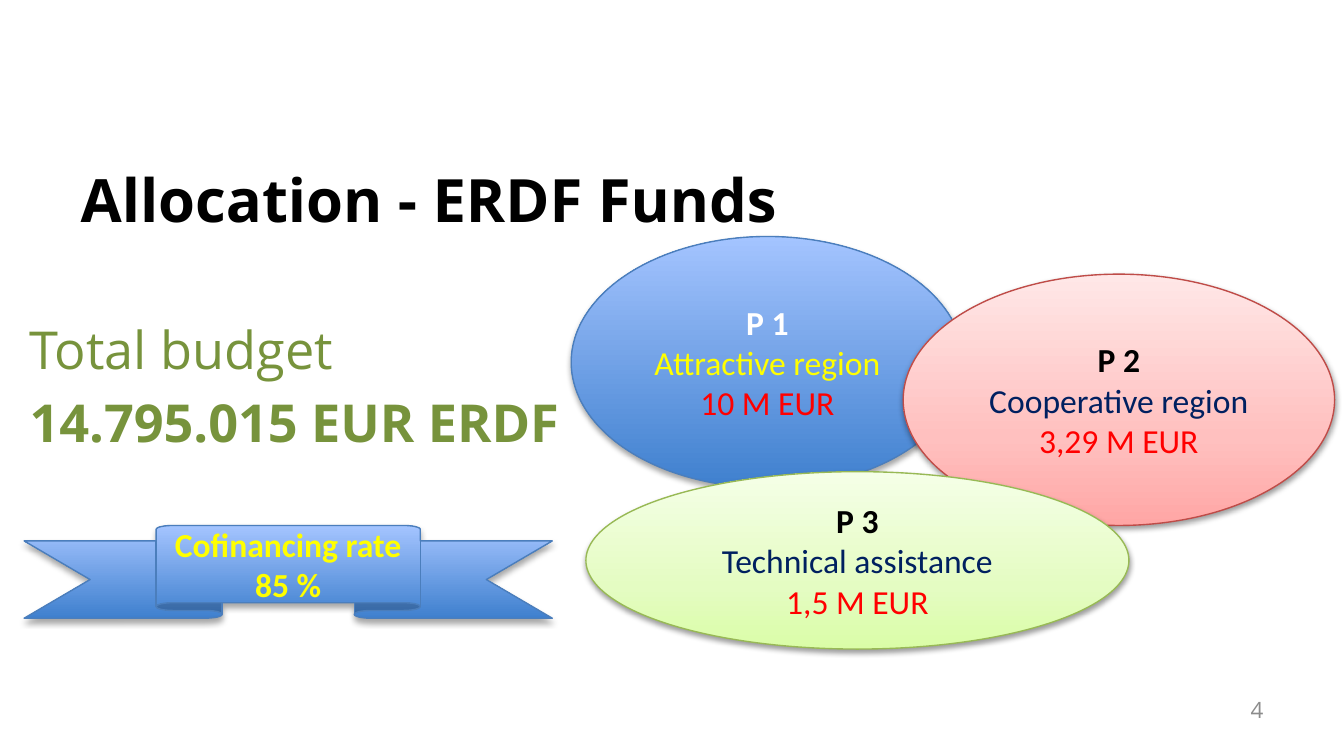
"""Build the ERDF fund allocation slide with its three priorities."""
import copy
from dataclasses import dataclass
from typing import Any

import lxml.etree
import pptx
import pptx.dml.color
import pptx.enum.shapes
import pptx.enum.text
import pptx.oxml.ns
import pptx.util

Inches = pptx.util.Inches
Pt = pptx.util.Pt
RGBColor = pptx.dml.color.RGBColor
qn = pptx.oxml.ns.qn
Shapes = pptx.enum.shapes.MSO_SHAPE
Align = pptx.enum.text.PP_ALIGN
Anchor = pptx.enum.text.MSO_ANCHOR

BLACK = RGBColor(0x00, 0x00, 0x00)
WHITE = RGBColor(0xFF, 0xFF, 0xFF)
YELLOW = RGBColor(0xFF, 0xFF, 0x00)
RED = RGBColor(0xFF, 0x00, 0x00)
NAVY = RGBColor(0x00, 0x20, 0x60)
OLIVE = RGBColor(0x77, 0x93, 0x3C)
GREY = RGBColor(0x8C, 0x8C, 0x8C)
BLUE_LINE = RGBColor(0x4B, 0x7E, 0xBC)
RED_LINE = RGBColor(0xBF, 0x4C, 0x48)
GREEN_LINE = RGBColor(0x98, 0xB9, 0x55)


@dataclass(frozen=True)
class Line:
    text: str
    color: RGBColor
    bold: bool = False


@dataclass(frozen=True)
class Look:
    stops: tuple[tuple[float, RGBColor], ...]
    outline: RGBColor
    shadow_alpha: int
    shadow_distance: float


@dataclass(frozen=True)
class Badge:
    outline: Any
    box: tuple[float, float, float, float]
    look: Look
    lines: tuple[Line, ...]


BLUE = Look(((0, RGBColor(0x3F, 0x80, 0xCE)), (1, RGBColor(0xA4, 0xC4, 0xFF))),
            BLUE_LINE, 35, 1.8)
PINK = Look(((0, RGBColor(0xFF, 0xA6, 0xA5)), (0.35, RGBColor(0xFF, 0xC0, 0xBF)),
             (1, RGBColor(0xFF, 0xE7, 0xE7))), RED_LINE, 38, 1.6)
GREEN = Look(((0, RGBColor(0xDA, 0xFD, 0xA7)), (0.35, RGBColor(0xE4, 0xFC, 0xC2)),
              (1, RGBColor(0xF5, 0xFF, 0xE7))), GREEN_LINE, 38, 1.6)

BADGES = (
    Badge(Shapes.OVAL, (4.25, 1.76, 2.92, 1.87), BLUE,
          (Line("P 1", WHITE, True), Line("Attractive region", YELLOW),
           Line("10 M EUR", RED))),
    Badge(Shapes.OVAL, (6.72, 2.04, 3.21, 1.87), PINK,
          (Line("P 2", BLACK, True), Line("Cooperative region", NAVY),
           Line("3,29 M EUR", RED))),
    Badge(Shapes.OVAL, (4.36, 3.51, 4.04, 1.32), GREEN,
          (Line("P 3", BLACK, True), Line("Technical assistance", NAVY),
           Line("1,5 M EUR", RED))),
    Badge(Shapes.UP_RIBBON, (0.18, 3.91, 3.93, 0.69), BLUE,
          (Line("Cofinancing rate", YELLOW, True), Line("85 %", YELLOW, True))),
)


def place(shape: Any, box: tuple[float, float, float, float]) -> None:
    for side, length in zip(("left", "top", "width", "height"), box):
        setattr(shape, side, Inches(length))


def write(shape: Any, lines: tuple[Line, ...], font: str, size: float,
          align: Any, anchor: Any, plain_list: bool = False, gap: float = 0) -> None:
    frame = shape.text_frame
    frame_format = {"word_wrap": True, "vertical_anchor": anchor,
                    "auto_size": pptx.enum.text.MSO_AUTO_SIZE.NONE}
    for name, value in frame_format.items():
        setattr(frame, name, value)
    for index, line in enumerate(lines):
        paragraph = frame.paragraphs[0] if index == 0 else frame.add_paragraph()
        paragraph.alignment = align
        paragraph.space_before = Pt(gap if index else 0)
        if plain_list:
            properties = paragraph._p.get_or_add_pPr()
            properties.set("marL", "0")
            properties.set("indent", "0")
            lxml.etree.SubElement(properties, qn("a:buNone"))
        run = paragraph.add_run()
        run.text = line.text
        for name, value in {"name": font, "size": Pt(size), "bold": line.bold}.items():
            setattr(run.font, name, value)
        run.font.color.rgb = line.color


def apply_look(shape: Any, look: Look) -> None:
    shape.fill.gradient()
    shape.fill.gradient_angle = 90
    stop_list = next(shape._element.spPr.iter(qn("a:gsLst")))
    for _ in look.stops[2:]:
        stop_list.append(copy.deepcopy(stop_list[0]))
    for stop, (position, color) in zip(shape.fill.gradient_stops, look.stops):
        stop.position = position
        stop.color.rgb = color
    shape.line.color.rgb = look.outline
    shape.line.width = Pt(0.75)
    shape.shadow.inherit = False
    effects = shape._element.spPr.find(qn("a:effectLst"))
    shadow = lxml.etree.SubElement(
        effects, qn("a:outerShdw"), blurRad=str(Pt(3.1)),
        dist=str(Pt(look.shadow_distance)), dir="5400000", rotWithShape="0")
    color = lxml.etree.SubElement(shadow, qn("a:srgbClr"), val=str(BLACK))
    lxml.etree.SubElement(color, qn("a:alpha"), val=str(look.shadow_alpha * 1000))


def draw_badge(slide: Any, badge: Badge) -> None:
    shape = slide.shapes.add_shape(badge.outline, *map(Inches, badge.box))
    apply_look(shape, badge.look)
    write(shape, badge.lines, "Calibri", 18, Align.CENTER, Anchor.MIDDLE)


def main() -> None:
    deck = pptx.Presentation()
    deck.slide_width = Inches(10)
    deck.slide_height = deck.slide_width * 9 // 16
    slide = deck.slides.add_slide(deck.slide_layouts[1])

    title = slide.shapes.title
    place(title, (0.5, 1.01, 9, 0.94))
    write(title, (Line("Allocation - ERDF Funds", BLACK, True),),
          "Open Sans", 32, Align.LEFT, Anchor.MIDDLE)

    budget = slide.placeholders[1]
    place(budget, (0.12, 2.31, 4.35, 1.72))
    write(budget, (Line("Total budget", OLIVE), Line("14.795.015 EUR ERDF", OLIVE, True)),
          "Open Sans", 28, Align.LEFT, Anchor.TOP, plain_list=True, gap=5.6)

    page_number = slide.shapes.add_textbox(*map(Inches, (7.17, 5.13, 2.33, 0.3)))
    write(page_number, (Line("4", GREY),), "Open Sans", 12, Align.RIGHT, Anchor.MIDDLE)

    for badge in BADGES:
        draw_badge(slide, badge)
    deck.save("out.pptx")


if __name__ == "__main__":
    main()
